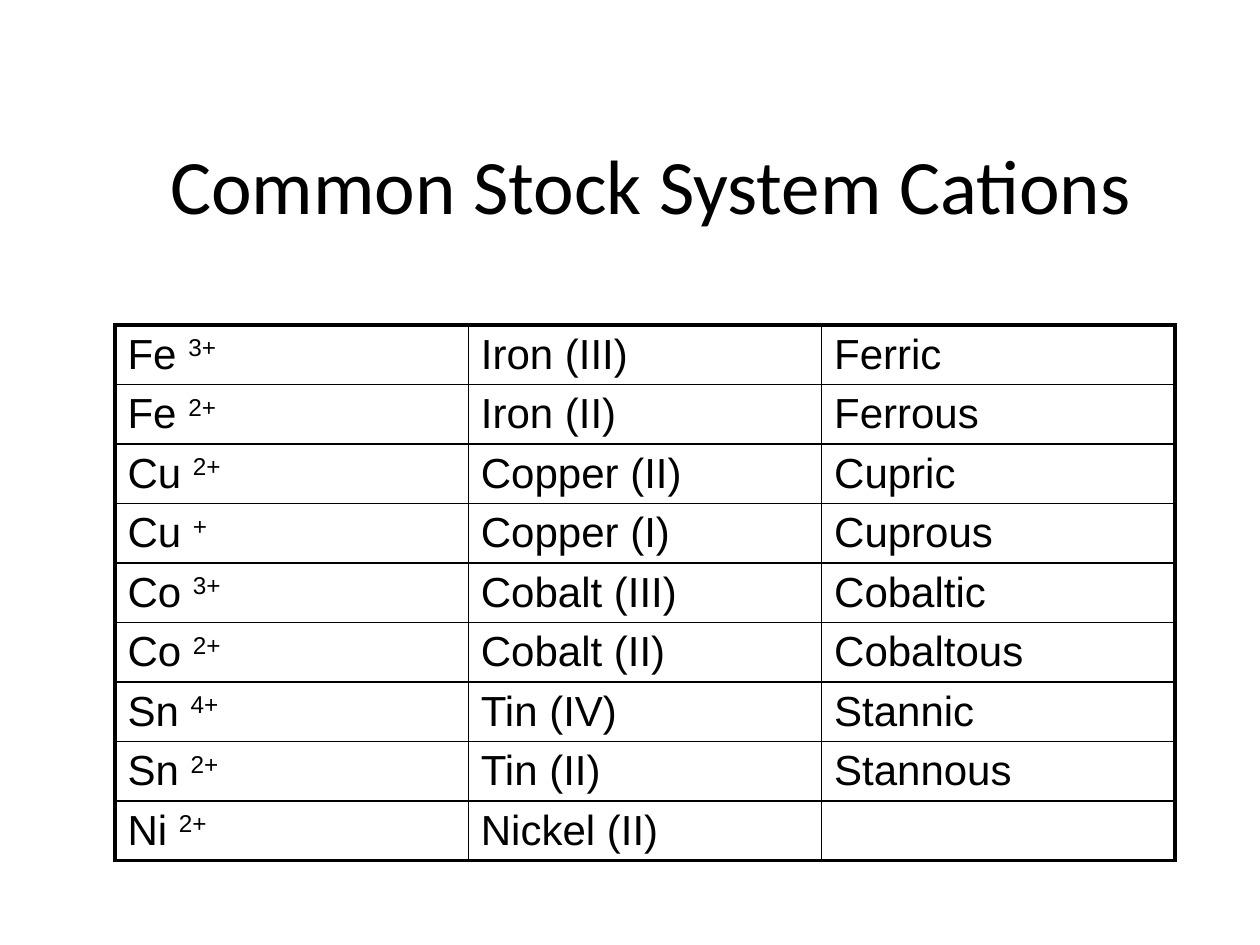
from lxml.etree import SubElement
from pptx import Presentation
from pptx.dml.color import RGBColor
from pptx.enum.text import MSO_ANCHOR, PP_ALIGN
from pptx.oxml.ns import qn
from pptx.util import Emu, Pt

PX = 914400 // 126
BLACK = RGBColor(0, 0, 0)
THIN, THICK = Pt(1), Pt(2.25)
TITLE_FONT = {"name": "Calibri", "size": Pt(44)}
CELL_FONT = {"name": "Arial", "size": Pt(24)}
CATIONS = [
    ("Fe", "3+", "Iron (III)", "Ferric"),
    ("Fe", "2+", "Iron (II)", "Ferrous"),
    ("Cu", "2+", "Copper (II)", "Cupric"),
    ("Cu", "+", "Copper (I)", "Cuprous"),
    ("Co", "3+", "Cobalt (III)", "Cobaltic"),
    ("Co", "2+", "Cobalt (II)", "Cobaltous"),
    ("Sn", "4+", "Tin (IV)", "Stannic"),
    ("Sn", "2+", "Tin (II)", "Stannous"),
    ("Ni", "2+", "Nickel (II)", ""),
]


def px(n):
    return Emu(n * PX)


def add_run(p, text, fmt):
    r = p.add_run()
    r.text = text
    for key, value in fmt.items():
        setattr(r.font, key, value)
    r.font.color.rgb = BLACK
    return r


def set_borders(cell, widths):
    tc_pr = cell._tc.get_or_add_tcPr()
    for side, width in widths.items():
        ln = SubElement(tc_pr, qn(f"a:ln{side}"), w=str(width))
        fill = SubElement(ln, qn("a:solidFill"))
        SubElement(fill, qn("a:srgbClr"), val=str(BLACK))


def add_title(slide, x, y, w, h):
    tf = slide.shapes.add_textbox(px(x), px(y), px(w), px(h)).text_frame
    tf.word_wrap = True
    tf.vertical_anchor = MSO_ANCHOR.MIDDLE
    p = tf.paragraphs[0]
    p.alignment = PP_ALIGN.CENTER
    add_run(p, "Common Stock System Cations", TITLE_FONT)


def add_cation_table(slide, x, y, w, h):
    rows, cols = len(CATIONS), 3
    table = slide.shapes.add_table(rows, cols, px(x), px(y), px(w), px(h)).table
    table.first_row = table.horz_banding = False
    for i, (symbol, charge, stock, classical) in enumerate(CATIONS):
        for j, text in enumerate((f"{symbol} ", stock, classical)):
            cell = table.cell(i, j)
            set_borders(cell, {
                "L": THICK if j == 0 else THIN,
                "R": THICK if j == cols - 1 else THIN,
                "T": THICK if i == 0 else THIN,
                "B": THICK if i == rows - 1 else THIN,
            })
            cell.fill.background()
            cell.margin_bottom = px(2)
            p = cell.text_frame.paragraphs[0]
            if text:
                add_run(p, text, CELL_FONT)
            if j == 0:
                r = add_run(p, charge, CELL_FONT)
                r.font._element.set("baseline", "30000")


def main():
    prs = Presentation()
    prs.slide_width, prs.slide_height = px(1260), px(945)
    slide = prs.slides.add_slide(prs.slide_layouts[6])
    add_title(slide, 105, 105, 1092, 158)
    add_cation_table(slide, 115, 325, 1060, 536)
    prs.save("out.pptx")


if __name__ == "__main__":
    main()
